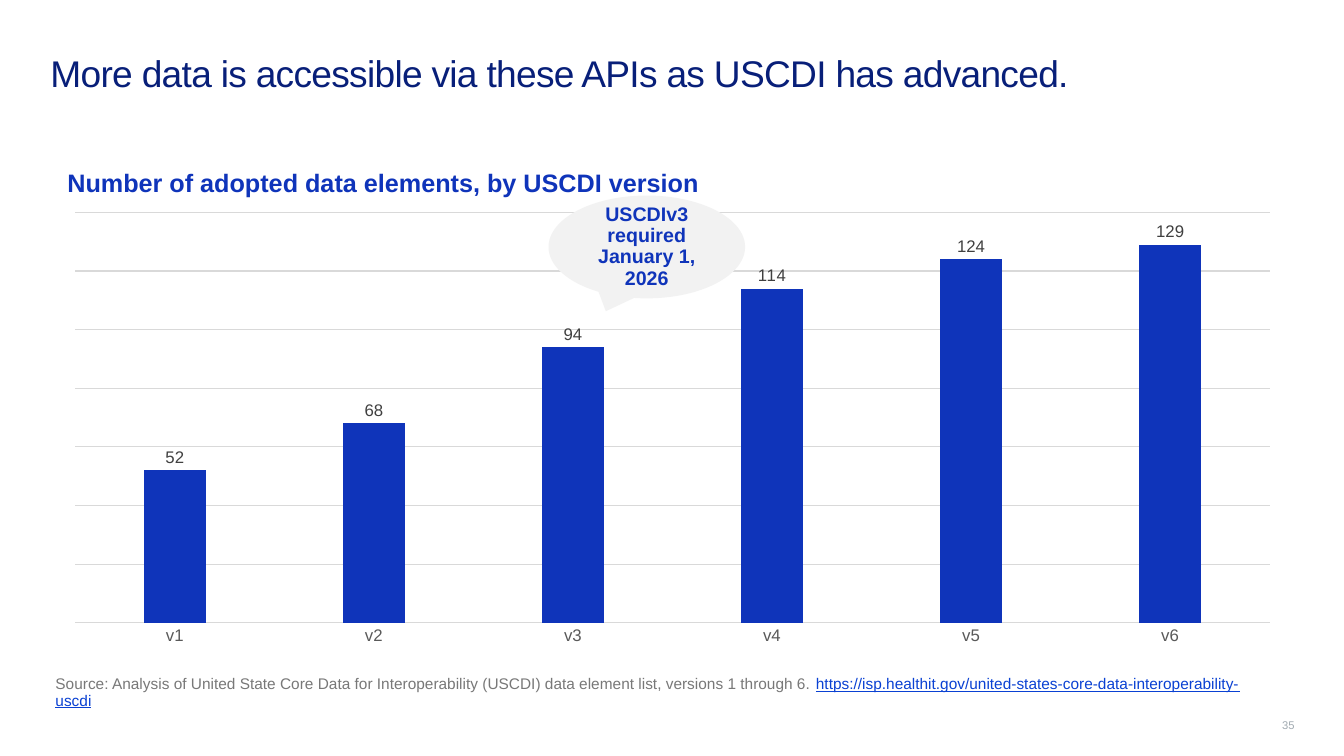
from dataclasses import dataclass

from lxml import etree
from pptx import Presentation
from pptx.chart.data import CategoryChartData
from pptx.dml.color import RGBColor
from pptx.enum.chart import XL_CHART_TYPE as ChartType
from pptx.enum.chart import XL_LABEL_POSITION as LabelPosition
from pptx.enum.chart import XL_TICK_LABEL_POSITION as TickLabels
from pptx.enum.chart import XL_TICK_MARK as TickMark
from pptx.enum.shapes import MSO_SHAPE as Preset
from pptx.enum.text import MSO_ANCHOR as Anchor
from pptx.enum.text import MSO_AUTO_SIZE as AutoSize
from pptx.enum.text import PP_ALIGN as Align
from pptx.oxml.ns import qn
from pptx.util import Inches, Pt


@dataclass(frozen=True)
class Theme:
    font: str = "Arial"
    navy: str = "081F79"
    blue: str = "0F34BA"
    link: str = "0A41D3"
    source: str = "787878"
    number: str = "A1AAB1"
    axis: str = "595959"
    label: str = "404040"
    grid: str = "D9D9D9"
    bubble: str = "F2F2F2"
    title_size: float = 26.5
    heading_size: float = 18
    callout_size: float = 14
    chart_size: float = 12
    source_size: float = 11
    number_size: float = 8


THEME = Theme()
VERSIONS = {"v1": 52, "v2": 68, "v3": 94, "v4": 114, "v5": 124, "v6": 129}


def style(font, size, color, bold=False):
    font.name = THEME.font
    font.size = Pt(size)
    font.bold = bold
    font.color.rgb = RGBColor.from_string(color)


def set_frame(frame, insets, anchor):
    frame.word_wrap = True
    frame.auto_size = AutoSize.NONE
    frame.vertical_anchor = anchor
    (frame.margin_left, frame.margin_top,
     frame.margin_right, frame.margin_bottom) = map(Inches, insets)


def place(shape, box):
    shape.left, shape.top, shape.width, shape.height = map(Inches, box)


def set_layout(parent, before, inner=False, **fractions):
    """Fix a chart part at fractions of the chart area."""
    for old in parent.findall(qn("c:layout")):
        parent.remove(old)
    layout = etree.Element(qn("c:layout"))
    manual = etree.SubElement(layout, qn("c:manualLayout"))
    settings = {"layoutTarget": "inner"} if inner else {}
    settings |= {"xMode": "edge", "yMode": "edge"} | fractions
    for name, value in settings.items():
        etree.SubElement(manual, qn(f"c:{name}")).set("val", str(value))
    parent.find(qn(before)).addprevious(layout)


def add_title(page, box):
    title = page.shapes.title
    place(title, box)
    set_frame(title.text_frame, (0, 0, 0, 0.05), Anchor.TOP)
    title.text_frame.text = "More data is accessible via these APIs as USCDI has advanced."
    para = title.text_frame.paragraphs[0]
    para.alignment = Align.LEFT
    span = para.runs[0]
    style(span.font, THEME.title_size, THEME.navy)
    span.font._element.set("spc", "-50")


def add_version_chart(page, box):
    data = CategoryChartData()
    data.categories = list(VERSIONS)
    data.add_series("Series 1", list(VERSIONS.values()))
    chart = page.shapes.add_chart(
        ChartType.COLUMN_CLUSTERED, *map(Inches, box), data).chart
    chart.has_legend = False
    style(chart.font, THEME.chart_size, THEME.axis)

    # Heading
    chart.has_title = True
    heading = chart.chart_title
    heading.text_frame.text = "Number of adopted data elements, by USCDI version"
    style(heading.text_frame.paragraphs[0].runs[0].font,
          THEME.heading_size, THEME.blue, bold=True)
    heading.include_in_layout = False
    set_layout(heading._element, "c:overlay", x=0.01, y=0.026)

    # Columns and their values
    plot = chart.plots[0]
    plot.gap_width = 219
    plot.overlap = -27
    plot.vary_by_categories = False
    columns = plot.series[0]
    columns.format.fill.solid()
    columns.format.fill.fore_color.rgb = RGBColor.from_string(THEME.blue)
    labels = columns.data_labels
    labels.show_value = True
    labels.position = LabelPosition.OUTSIDE_END
    style(labels.font, THEME.chart_size, THEME.label)

    # Axes and gridlines
    versions, counts = chart.category_axis, chart.value_axis
    versions.major_tick_mark = TickMark.NONE
    style(versions.tick_labels.font, THEME.chart_size, THEME.axis)
    counts.minimum_scale, counts.maximum_scale, counts.major_unit = 0, 140, 20
    counts.major_tick_mark = TickMark.NONE
    counts.tick_label_position = TickLabels.NONE
    counts.visible = False
    counts.has_major_gridlines = True
    for line in (versions.format.line, counts.major_gridlines.format.line):
        line.color.rgb = RGBColor.from_string(THEME.grid)
        line.width = Pt(0.75)
    set_layout(chart._chartSpace.chart.plotArea, "c:barChart", inner=True,
               x=0.02, y=0.127, w=0.96, h=0.811)


def add_source(page, box):
    frame = page.shapes.add_textbox(*map(Inches, box)).text_frame
    set_frame(frame, (0.05,) * 4, Anchor.TOP)
    para = frame.paragraphs[0]
    para.line_spacing = 0.9
    span = para.add_run()
    span.text = ("Source: Analysis of United State Core Data for Interoperability "
                 "(USCDI) data element list, versions 1 through 6. ")
    style(span.font, THEME.source_size, THEME.source)
    address = para.add_run()
    address.text = "https://isp.healthit.gov/united-states-core-data-interoperability-uscdi"
    style(address.font, THEME.source_size, THEME.link)
    address.font.underline = True


def add_callout(page, box):
    bubble = page.shapes.add_shape(Preset.OVAL_CALLOUT, *map(Inches, box))
    bubble.shadow.inherit = False
    bubble.fill.solid()
    bubble.fill.fore_color.rgb = RGBColor.from_string(THEME.bubble)
    bubble.line.fill.background()
    set_frame(bubble.text_frame, (0.1, 0.05, 0.1, 0.05), Anchor.MIDDLE)
    bubble.text_frame.text = "USCDIv3 required January 1, 2026"
    para = bubble.text_frame.paragraphs[0]
    para.alignment = Align.CENTER
    para.line_spacing = 0.9
    style(para.runs[0].font, THEME.callout_size, THEME.blue, bold=True)


def add_page_number(page, box):
    frame = page.shapes.add_textbox(*map(Inches, box)).text_frame
    set_frame(frame, (0,) * 4, Anchor.BOTTOM)
    frame.text = "35"
    para = frame.paragraphs[0]
    para.alignment = Align.RIGHT
    para.line_spacing = 0.9
    style(para.runs[0].font, THEME.number_size, THEME.number)


def main():
    deck = Presentation()
    deck.slide_width, deck.slide_height = Inches(13.33), Inches(7.5)
    page = deck.slides.add_slide(deck.slide_layouts[5])
    add_title(page, (0.5, 0.5, 12.34, 0.97))
    add_version_chart(page, (0.5, 1.47, 12.34, 5.02))
    add_source(page, (0.5, 6.66, 12.15, 0.34))
    add_callout(page, (5.44, 1.94, 1.95, 1.02))
    add_page_number(page, (12.54, 6.89, 0.3, 0.37))
    deck.save("out.pptx")


if __name__ == "__main__":
    main()
